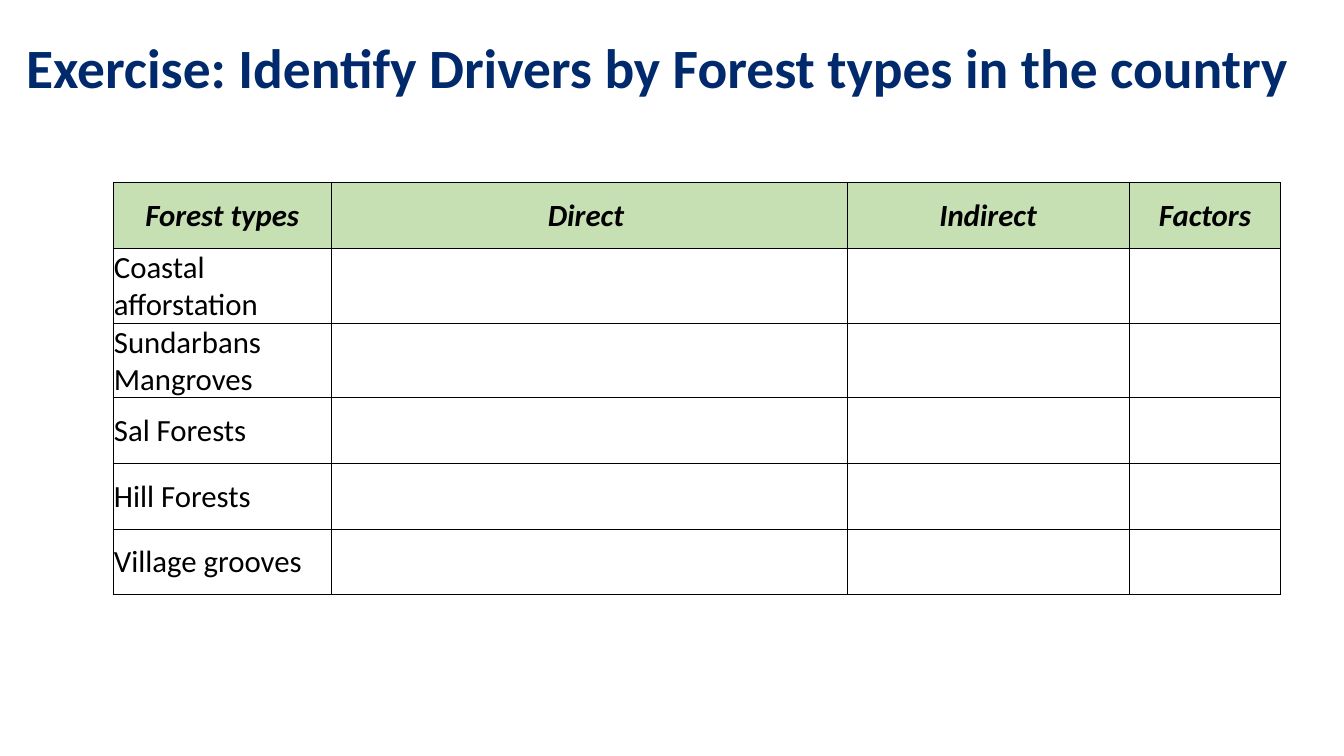
from lxml import etree
from pptx import Presentation
from pptx.dml.color import RGBColor
from pptx.enum.text import MSO_ANCHOR, PP_ALIGN
from pptx.oxml.ns import qn
from pptx.util import Inches, Pt

MIDDLE = MSO_ANCHOR.MIDDLE
CENTER, LEFT = PP_ALIGN.CENTER, PP_ALIGN.LEFT

TITLE = "Exercise: Identify Drivers by Forest types in the country"
HEADINGS = ["Forest types", "Direct ", "Indirect", "Factors"]
FOREST_TYPES = [
    "Coastal afforstation",
    "Sundarbans Mangroves",
    "Sal Forests",
    "Hill Forests",
    "Village grooves",
]
COLUMN_WIDTHS = [2.17, 5.11, 2.8, 1.5]
ROW_HEIGHT = 0.65
NAVY, BLACK, GREEN = "002A6C", "000000", "C6E0B4"


def color(hex_value):
    return RGBColor.from_string(hex_value)


def style_text(paragraph, size, hex_value, bold=False, italic=False):
    for run in paragraph.runs:
        font = run.font
        font.name, font.size = "Calibri", Pt(size)
        font.bold, font.italic = bold, italic
        font.color.rgb = color(hex_value)


def add_borders(cell):
    """Draw a thin black line on all four sides of a cell."""
    properties = cell._tc.get_or_add_tcPr()
    for position, side in enumerate(("lnL", "lnR", "lnT", "lnB")):
        line = etree.Element(qn(f"a:{side}"), w=str(Pt(0.5)))
        fill = etree.SubElement(line, qn("a:solidFill"))
        etree.SubElement(fill, qn("a:srgbClr"), val=BLACK)
        properties.insert(position, line)


def add_title(slide):
    box = slide.shapes.add_textbox(Inches(0.16), Inches(0.37), Inches(12.99), Inches(0.65))
    frame = box.text_frame
    frame.text = TITLE
    frame.word_wrap = True
    frame.vertical_anchor = MIDDLE
    heading = frame.paragraphs[0]
    heading.line_spacing = 0.9
    style_text(heading, 39.6, NAVY, bold=True)


def add_driver_table(slide):
    rows = [HEADINGS] + [[forest, "", "", ""] for forest in FOREST_TYPES]
    table = slide.shapes.add_table(
        len(rows), len(HEADINGS), Inches(1.12), Inches(1.81),
        Inches(sum(COLUMN_WIDTHS)), Inches(ROW_HEIGHT * len(rows)),
    ).table
    table.first_row = table.horz_banding = False
    for column, width in zip(table.columns, COLUMN_WIDTHS):
        column.width = Inches(width)

    for row_index, texts in enumerate(rows):
        is_heading = row_index == 0
        table.rows[row_index].height = Inches(ROW_HEIGHT)
        for column_index, text in enumerate(texts):
            cell = table.cell(row_index, column_index)
            cell.text = text
            cell.vertical_anchor = MIDDLE
            cell.margin_left = cell.margin_right = cell.margin_top = Inches(0.01)
            cell.margin_bottom = 0
            if is_heading:
                cell.fill.solid()
                cell.fill.fore_color.rgb = color(GREEN)
            else:
                cell.fill.background()
            add_borders(cell)
            paragraph = cell.text_frame.paragraphs[0]
            paragraph.alignment = CENTER if is_heading else LEFT
            style_text(paragraph, 22, BLACK, bold=is_heading, italic=is_heading)


def main():
    deck = Presentation()
    deck.slide_width, deck.slide_height = Inches(13.33), Inches(7.5)
    slide = deck.slides.add_slide(deck.slide_layouts[6])
    add_title(slide)
    add_driver_table(slide)
    deck.save("out.pptx")


if __name__ == "__main__":
    main()
